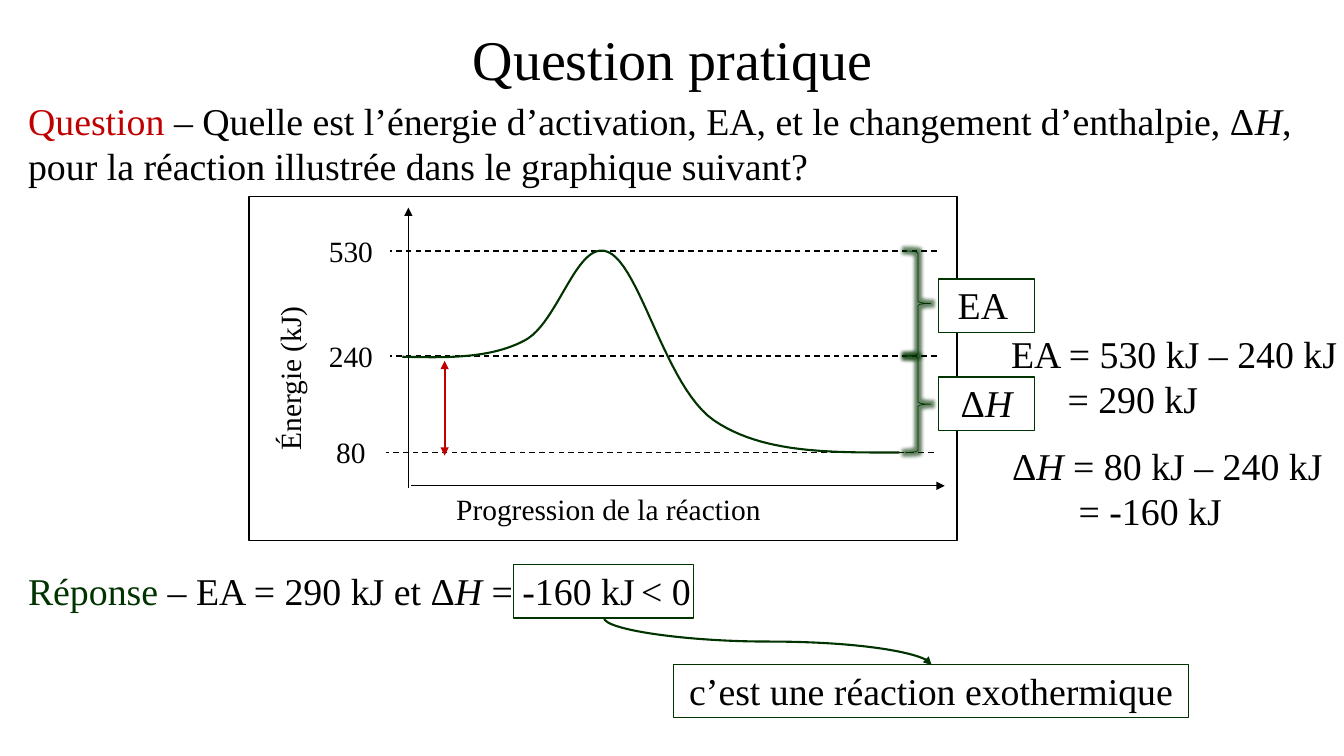
"""Builds the slide on activation energy and enthalpy change."""
from dataclasses import dataclass
from typing import Optional

from lxml import etree
from pptx import Presentation
from pptx import util as u
from pptx.dml.color import RGBColor
from pptx.enum import dml, shapes, text
from pptx.oxml import ns

COLORS = {"black": "000000", "white": "FFFFFF", "green": "003300", "red": "C00000"}
FONT = "Times New Roman"
BODY, LABEL = 27, 21


@dataclass
class Piece:
    words: str
    color: str = "black"
    italic: bool = False


@dataclass
class Caption:
    left: float
    top: float
    width: float
    height: float
    lines: list[list[Piece]]
    size: int = BODY
    centered: bool = True
    rotation: int = 0
    second_indent: float = 0


@dataclass
class Frame:
    left: float
    top: float
    width: float
    height: float
    color: str = "green"


@dataclass
class Stroke:
    start: tuple[float, float]
    end: tuple[float, float]
    color: str = "black"
    weight: float = 1
    dashed: bool = False
    head: bool = False
    tail: bool = False


H = Piece("H", italic=True)
LEVELS = {"530": 2.49, "240": 3.53, "80": 4.49}

FRAMES = [
    Frame(5.09, 5.6, 1.79, 0.53),
    Frame(2.47, 1.95, 7.02, 3.41, "black"),
    Frame(9.31, 2.77, 0.95, 0.53),
    Frame(9.31, 3.74, 0.95, 0.53),
    Frame(6.68, 6.59, 5.11, 0.53),
]

STROKES = [
    Stroke((4.05, 2.06), (4.05, 4.84), weight=0.5, head=True),
    Stroke((4.08, 4.82), (9.37, 4.82), weight=0.5, tail=True),
    Stroke((9.29, LEVELS["530"]), (3.87, LEVELS["530"]), dashed=True),
    Stroke((9.29, LEVELS["240"]), (3.87, LEVELS["240"]), dashed=True),
    Stroke((9.26, LEVELS["80"]), (3.83, LEVELS["80"]), dashed=True),
    Stroke((4.41, 3.58), (4.41, 4.52), "red", 1.5, head=True, tail=True),
]

CAPTIONS = [
    Caption(0.18, 0.92, 13.15, 1.01, [[
        Piece("Question ", "red"),
        Piece("– Quelle est l’énergie d’activation, EA, et le changement d’enthalpie, Δ"),
        H, Piece(", pour la réaction illustrée dans le graphique suivant?")]], centered=False),
    Caption(0.18, 5.58, 6.33, 0.56, [[
        Piece("Réponse ", "green"), Piece("– EA = 290 kJ et Δ"), H,
        Piece(" = -160 kJ")]], centered=False),
    Caption(6.26, 5.58, 0.86, 0.56, [[Piece("< 0")]], centered=False),
    Caption(2.03, 3.53, 1.68, 0.45, [[Piece("Énergie (kJ)")]], LABEL, rotation=270),
    Caption(3.74, 4.82, 4.59, 0.45, [[Piece("Progression de la réaction")]], LABEL),
    Caption(9.31, 2.75, 0.95, 0.56, [[Piece("EA ")]]),
    Caption(9.23, 3.72, 1.11, 0.56, [[Piece("Δ"), H]]),
    Caption(9.93, 3.23, 3.57, 1.01, [[Piece("EA = 530 kJ – 240 kJ")], [Piece("= 290 kJ")]],
            centered=False, second_indent=0.56),
    Caption(9.94, 4.34, 3.57, 1.01,
            [[Piece("Δ"), H, Piece(" = 80 kJ – 240 kJ")], [Piece("= -160 kJ")]],
            centered=False, second_indent=0.66),
    Caption(6.43, 6.58, 5.61, 0.56, [[Piece("c’est une réaction exothermique")]]),
] + [Caption(2.92, y - 0.23, 1.12, 0.45, [[Piece(value)]], LABEL) for value, y in LEVELS.items()]

CURVE_START = (3.99, 3.54)
CURVE_PARTS = [
    ((4.42, 3.55), (4.86, 3.56), (5.2, 3.38)),
    ((5.54, 3.21), (5.72, 2.37), (6.03, 2.5)),
    ((6.35, 2.63), (6.6, 3.84), (7.08, 4.17)),
    ((7.56, 4.5), (8.24, 4.49), (8.92, 4.49)),
]


def rgb(color: str) -> RGBColor:
    """Return a named colour."""
    return RGBColor.from_string(COLORS[color])


def style_font(font, size: float, color: str = "black", italic: bool = False) -> None:
    """Apply the slide's typeface with a size and colour."""
    font.name, font.size, font.italic = FONT, u.Pt(size), italic
    font.color.rgb = rgb(color)


def style_line(line, color: str, weight: float) -> None:
    """Apply a solid line colour and width."""
    line.color.rgb, line.width = rgb(color), u.Pt(weight)


def draw_frame(slide, frame: Frame) -> None:
    """Draw a white outlined rectangle."""
    panel = slide.shapes.add_shape(
        shapes.MSO_SHAPE.RECTANGLE,
        *map(u.Inches, (frame.left, frame.top, frame.width, frame.height)))
    panel.shadow.inherit = False
    panel.fill.solid()
    panel.fill.fore_color.rgb = rgb("white")
    style_line(panel.line, frame.color, 1)


def draw_caption(slide, caption: Caption) -> None:
    """Draw a text box with its formatted pieces."""
    box = slide.shapes.add_textbox(
        *map(u.Inches, (caption.left, caption.top, caption.width, caption.height)))
    box.rotation = caption.rotation
    frame = box.text_frame
    frame.word_wrap = True
    for index, pieces in enumerate(caption.lines):
        paragraph = frame.add_paragraph() if index else frame.paragraphs[0]
        paragraph.alignment = text.PP_ALIGN.CENTER if caption.centered else text.PP_ALIGN.LEFT
        if index and caption.second_indent:
            paragraph._p.get_or_add_pPr().set("marL", str(u.Inches(caption.second_indent)))
        for piece in pieces:
            run = paragraph.add_run()
            run.text = piece.words
            style_font(run.font, caption.size, piece.color, piece.italic)


def finish_connector(connector, stroke: Stroke) -> None:
    """Set a connector's line, arrowheads and lack of shadow."""
    style_line(connector.line, stroke.color, stroke.weight)
    if stroke.dashed:
        connector.line.dash_style = dml.MSO_LINE.DASH
    outline = connector.line._get_or_add_ln()
    for tag, shown in (("a:headEnd", stroke.head), ("a:tailEnd", stroke.tail)):
        if shown:
            etree.SubElement(outline, ns.qn(tag), type="triangle")
    etree.SubElement(connector._element.spPr, ns.qn("a:effectLst"))


def draw_stroke(slide, stroke: Stroke, kind=shapes.MSO_CONNECTOR.STRAIGHT):
    """Draw a connector between two points."""
    connector = slide.shapes.add_connector(kind, *map(u.Inches, stroke.start + stroke.end))
    finish_connector(connector, stroke)
    return connector


def draw_curve(slide, steps: int = 24) -> None:
    """Draw the energy profile from its cubic segments."""
    points, start = [], CURVE_START
    for first, second, end in CURVE_PARTS:
        for t in (step / steps for step in range(1, steps + 1)):
            s = 1 - t
            points.append(tuple(
                u.Inches(s**3 * a + 3 * s * s * t * b + 3 * s * t * t * c + t**3 * d)
                for a, b, c, d in zip(start, first, second, end)))
        start = end
    builder = slide.shapes.build_freeform(*map(u.Inches, CURVE_START))
    builder.add_line_segments(points, close=False)
    profile = builder.convert_to_shape()
    profile.shadow.inherit = False
    profile.fill.background()
    style_line(profile.line, "green", 1.5)


def draw_brace(slide, top: float, bottom: float) -> None:
    """Draw a glowing brace between two energy levels."""
    brace = slide.shapes.add_shape(
        shapes.MSO_SHAPE.RIGHT_BRACE, *map(u.Inches, (8.98, top, 0.25, bottom - top)))
    brace.shadow.inherit = False
    brace.fill.background()
    style_line(brace.line, "green", 0.5)
    effects = brace._element.spPr.find(ns.qn("a:effectLst"))
    glow = etree.SubElement(effects, ns.qn("a:glow"), rad=str(u.Pt(5)))
    tint = etree.SubElement(glow, ns.qn("a:srgbClr"), val=COLORS["green"])
    etree.SubElement(tint, ns.qn("a:alpha"), val="60000")


def main() -> None:
    """Build and save the slide."""
    deck = Presentation()
    deck.slide_width, deck.slide_height = u.Inches(13.33), u.Inches(7.5)
    slide = deck.slides.add_slide(deck.slide_layouts[5])
    title = slide.shapes.title
    title.left, title.top, title.width, title.height = map(u.Inches, (0.92, 0.12, 11.5, 1))
    title.text_frame.text = "Question pratique"
    title.text_frame.auto_size = text.MSO_AUTO_SIZE.NONE
    title.text_frame.vertical_anchor = text.MSO_ANCHOR.MIDDLE
    heading = title.text_frame.paragraphs[0]
    heading.alignment, heading.line_spacing = text.PP_ALIGN.CENTER, 0.9
    style_font(heading.runs[0].font, 40)
    for frame in FRAMES:
        draw_frame(slide, frame)
    for stroke in STROKES:
        draw_stroke(slide, stroke)
    draw_curve(slide)
    levels = list(LEVELS.values())
    for top, bottom in zip(levels, levels[1:]):
        draw_brace(slide, top, bottom)
    for caption in CAPTIONS:
        draw_caption(slide, caption)
    conclusion = Stroke((7.85, 4.74), (7.38, 7.99), "green", 1.5, tail=True)
    arrow = draw_stroke(slide, conclusion, shapes.MSO_CONNECTOR.CURVE)
    arrow._element.spPr.find(ns.qn("a:xfrm")).set("rot", str(270 * 60000))
    deck.save("out.pptx")


if __name__ == "__main__":
    main()
